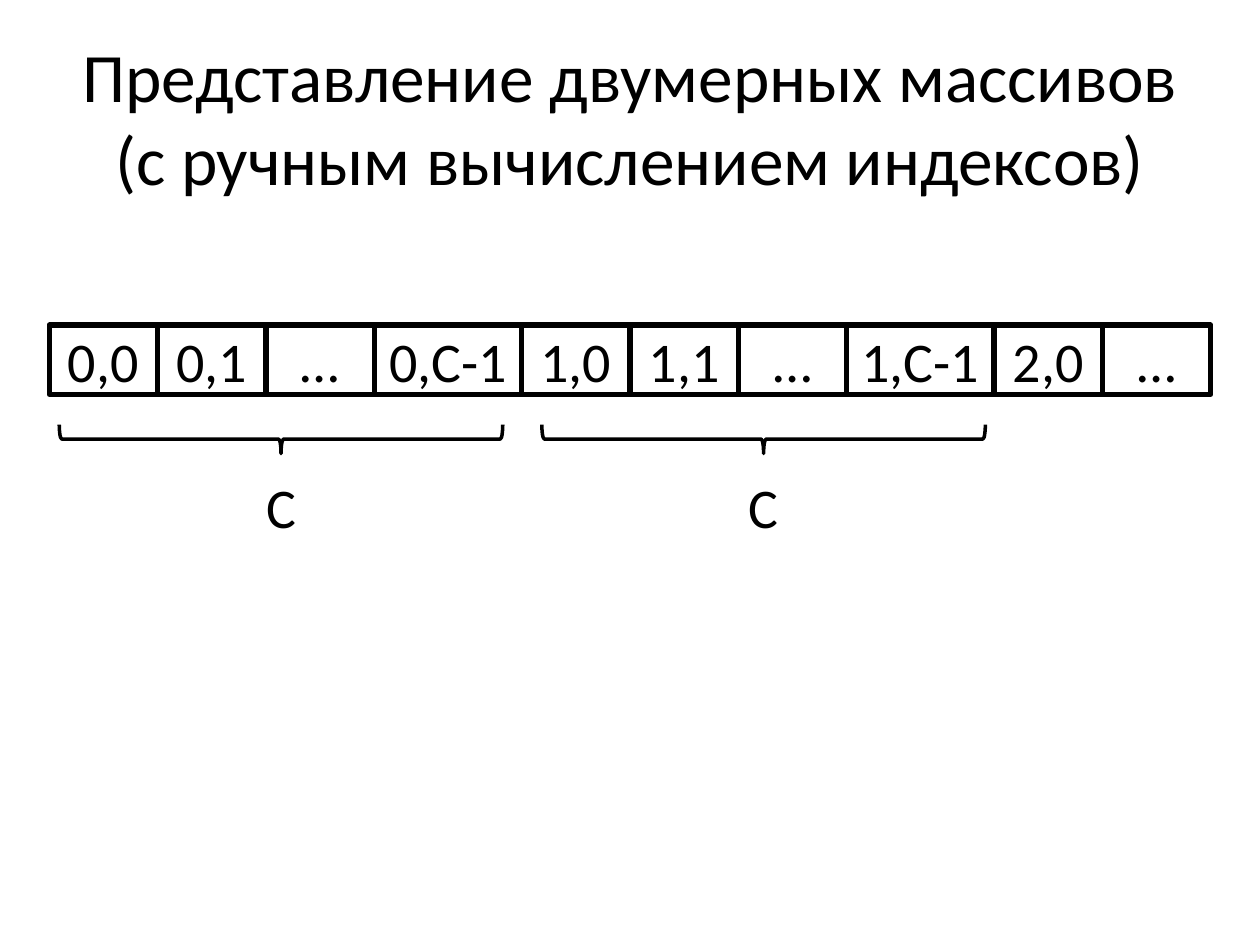
import pptx
import pptx.util
import pptx.dml.color
import pptx.enum.shapes
import pptx.enum.text
from dataclasses import dataclass

Inches, Pt = pptx.util.Inches, pptx.util.Pt
RGB = pptx.dml.color.RGBColor
SHAPE = pptx.enum.shapes.MSO_SHAPE


@dataclass(frozen=True)
class Theme:
    font: str = "Calibri"
    ink: RGB = RGB(0, 0, 0)
    paper: RGB = RGB(255, 255, 255)
    title_size: float = 39.6
    cell_size: float = 32
    cell_line: float = 3
    brace_line: float = 2


THEME = Theme()
SLIDE_W, SLIDE_H = 10, 7.5


def write(sp, lines, size):
    """Fill a shape with centred text, one line break between lines."""
    tf = sp.text_frame
    tf.word_wrap = True
    tf.vertical_anchor = pptx.enum.text.MSO_ANCHOR.MIDDLE
    p = tf.paragraphs[0]
    p.alignment = pptx.enum.text.PP_ALIGN.CENTER
    for i, line in enumerate(lines):
        if i:
            p.add_line_break()
        r = p.add_run()
        r.text = line
        r.font.name = THEME.font
        r.font.size = Pt(size)
        r.font.color.rgb = THEME.ink


def add_shape(s, kind, box, fill=None, line=None):
    sp = s.shapes.add_shape(kind, *map(Inches, box))
    sp.shadow.inherit = False
    if fill is None:
        sp.fill.background()
    else:
        sp.fill.solid()
        sp.fill.fore_color.rgb = fill
    if line is None:
        sp.line.fill.background()
    else:
        sp.line.color.rgb = THEME.ink
        sp.line.width = Pt(line)
    return sp


def add_title(s, box, lines):
    sp = s.shapes.add_textbox(*map(Inches, box))
    write(sp, lines, THEME.title_size)


def add_memory_row(s, box, labels):
    """Adjacent cells; the last cell of each matrix row is wider."""
    left, top, width, height = box
    wide_share = 1.36
    shares = [wide_share if "C" in label else 1 for label in labels]
    unit = width / sum(shares)
    for label, share in zip(labels, shares):
        sp = add_shape(s, SHAPE.RECTANGLE, (left, top, share * unit, height),
                       line=THEME.cell_line)
        sp.text_frame.margin_left = sp.text_frame.margin_right = 0
        write(sp, [label], THEME.cell_size)
        left += share * unit


def add_row_length(s, box, label):
    """Downward brace across the box with its label centred below."""
    left, top, width, height = box
    mid = left + width / 2
    brace_h, label_w, label_h = 0.23, 0.55, 0.7
    # The brace is laid out upright, then turned about its centre
    brace = add_shape(s, SHAPE.RIGHT_BRACE,
                      (mid - brace_h / 2, top + brace_h / 2 - width / 2,
                       brace_h, width), line=THEME.brace_line)
    brace.rotation = 90
    sp = add_shape(s, SHAPE.RECTANGLE,
                   (mid - label_w / 2, top + height - label_h, label_w, label_h),
                   fill=THEME.paper)
    write(sp, [label], THEME.cell_size)


def main():
    prs = pptx.Presentation()
    prs.slide_width, prs.slide_height = Inches(SLIDE_W), Inches(SLIDE_H)
    s = prs.slides.add_slide(prs.slide_layouts[6])

    # Title
    add_title(s, (0.05 * SLIDE_W, 0.04 * SLIDE_H, 0.9 * SLIDE_W, 1.25),
              ["Представление двумерных массивов",
               "(с ручным вычислением индексов)"])

    # Array cells in memory order
    margin = 0.39
    labels = [f"{row},{col}" if col != "…" else col
              for row in range(2) for col in ("0", "1", "…", "C-1")]
    add_memory_row(s, (margin, 2.58, SLIDE_W - 2 * margin, 0.55),
                   labels + ["2,0", "…"])

    # Length of each complete matrix row
    for i in range(2):
        add_row_length(s, (0.47 + i * 3.83, 3.37, 3.52, 1), "C")

    prs.save("out.pptx")


if __name__ == "__main__":
    main()
